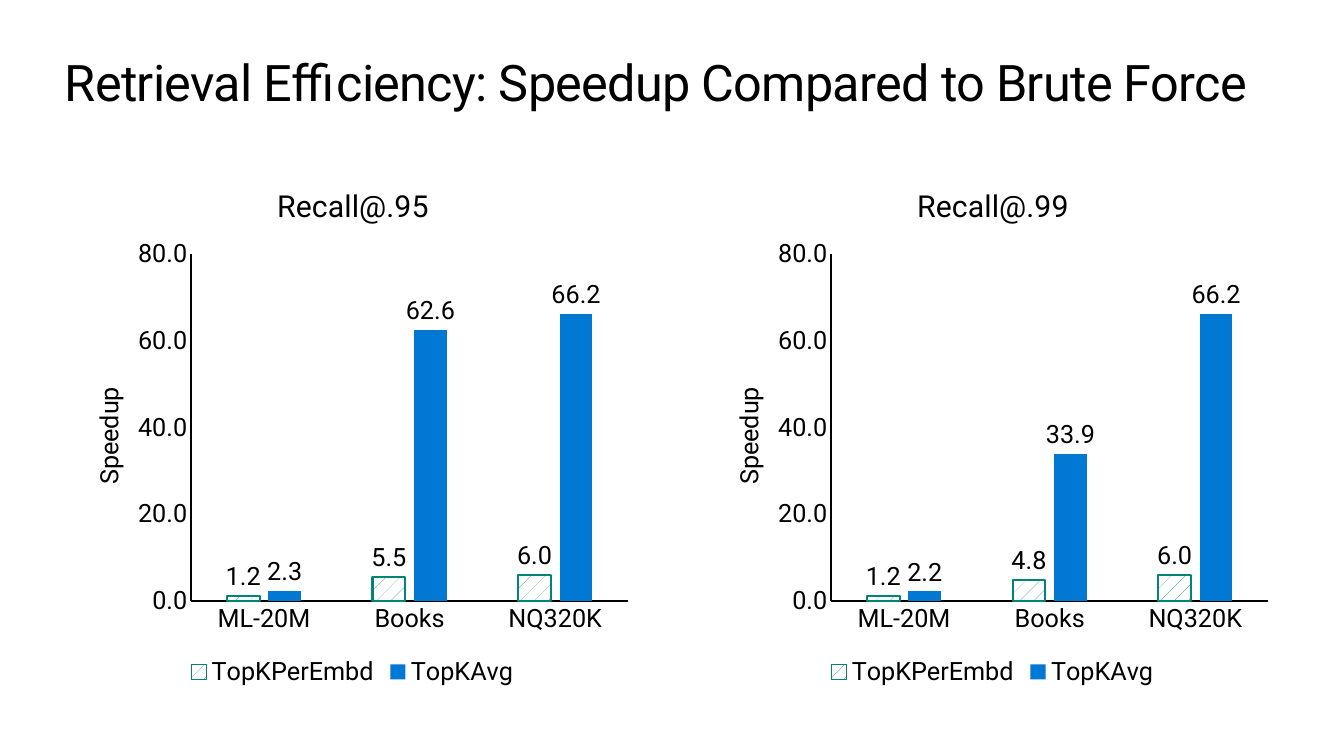
from lxml import etree
from pptx import Presentation
from pptx.chart.data import CategoryChartData
from pptx.dml.color import RGBColor
from pptx.enum.chart import XL_CHART_TYPE, XL_LABEL_POSITION, XL_LEGEND_POSITION, XL_TICK_MARK
from pptx.enum.dml import MSO_PATTERN
from pptx.enum.text import MSO_ANCHOR, PP_ALIGN
from pptx.oxml import parse_xml
from pptx.oxml.ns import nsdecls, qn
from pptx.util import Cm, Pt

COLORS = {"ink": "000000", "paper": "FFFFFF", "teal": "008575", "blue": "0078D4"}
DATASETS = ["ML-20M", "Books", "NQ320K"]
PER_EMBEDDING = "TopKPerEmbd"
AVERAGE = "TopKAvg"
RECALL_CHARTS = [
    ("Recall@.95", 1.63, {PER_EMBEDDING: (1.2, 5.5, 6.0), AVERAGE: (2.3, 62.6, 66.2)}),
    ("Recall@.99", 17.76, {PER_EMBEDDING: (1.2, 4.8, 6.0), AVERAGE: (2.2, 33.9, 66.2)}),
]


def color(name):
    return RGBColor.from_string(COLORS[name])


def layout(x, y, width=None, height=None):
    """Return a manual chart layout, in fractions of the chart's size."""
    parts = '<c:layoutTarget val="inner"/>' if width else ""
    parts += '<c:xMode val="edge"/><c:yMode val="edge"/>'
    sizes = {"x": x, "y": y, "w": width, "h": height}
    parts += "".join(f'<c:{key} val="{size}"/>' for key, size in sizes.items() if size)
    return parse_xml(f'<c:layout {nsdecls("c")}><c:manualLayout>{parts}</c:manualLayout></c:layout>')


class SpeedupSlide:
    font_name = "Roboto"
    number_format = "0.0"
    line_width = Pt(1.5)

    def __init__(self, deck):
        self.page = deck.slides.add_slide(deck.slide_layouts[5])

    def style_font(self, font, size):
        font.name = self.font_name
        font.size = Pt(size)
        font.bold = False
        font.color.rgb = color("ink")

    def add_title(self, text):
        box = self.page.shapes.title
        box.left, box.top, box.width, box.height = Cm(1.63), Cm(1.27), Cm(30.61), Cm(1.55)
        frame = box.text_frame
        frame.margin_left = frame.margin_top = frame.margin_right = frame.margin_bottom = 0
        frame.vertical_anchor = MSO_ANCHOR.MIDDLE
        frame.word_wrap = True
        para = frame.paragraphs[0]
        para.alignment = PP_ALIGN.LEFT
        span = para.add_run()
        span.text = text
        self.style_font(span.font, 36)
        span.font._element.set("spc", "-50")

    def write_chart_title(self, title, text, size, x, y):
        """Fill a chart or axis title and pin its top left corner."""
        span = title.text_frame.paragraphs[0].add_run()
        span.text = text
        self.style_font(span.font, size)
        element = title._element
        for old_layout in element.findall(qn("c:layout")):
            element.remove(old_layout)
        element.find(qn("c:tx")).addnext(layout(x, y))

    def style_axis(self, axis):
        axis.has_major_gridlines = False
        axis.major_tick_mark = axis.minor_tick_mark = XL_TICK_MARK.NONE
        self.style_font(axis.tick_labels.font, 18)
        axis.format.line.color.rgb = color("ink")
        axis.format.line.width = self.line_width

    def style_series(self, series):
        fill = series.format.fill
        if series.name == PER_EMBEDDING:
            fill.patterned()
            fill.pattern = MSO_PATTERN.PERCENT_5
            fill.fore_color.rgb = color("teal")
            fill.back_color.rgb = color("paper")
            series.format.line.color.rgb = color("teal")
            series.format.line.width = self.line_width
        else:
            fill.solid()
            fill.fore_color.rgb = color("blue")
        labels = series.data_labels
        labels.show_value = True
        labels.position = XL_LABEL_POSITION.OUTSIDE_END
        labels.number_format = self.number_format
        labels.number_format_is_linked = False
        self.style_font(labels.font, 18)

    def add_speedup_chart(self, title, left, speedups):
        data = CategoryChartData(number_format=self.number_format)
        data.categories = DATASETS
        for name, values in speedups.items():
            data.add_series(name, values)
        chart = self.page.shapes.add_chart(
            XL_CHART_TYPE.COLUMN_CLUSTERED, Cm(left), Cm(3.99), Cm(14.49), Cm(13.44), data
        ).chart
        self.style_font(chart.font, 18)
        chart.has_title = True
        self.write_chart_title(chart.chart_title, title, 21.6, 0.36, 0.04)

        self.style_axis(chart.category_axis)
        speedup_axis = chart.value_axis
        self.style_axis(speedup_axis)
        speedup_axis.minimum_scale, speedup_axis.maximum_scale = 0, 80
        speedup_axis.major_unit = 20
        speedup_axis.tick_labels.number_format = self.number_format
        speedup_axis.tick_labels.number_format_is_linked = False
        speedup_axis.has_title = True
        self.write_chart_title(speedup_axis.axis_title, "Speedup", 18, 0.04, 0.42)
        body = speedup_axis.axis_title.text_frame._txBody.find(qn("a:bodyPr"))
        body.set("rot", "-5400000")
        body.set("vert", "horz")

        plot = chart.plots[0]
        plot.gap_width = 219
        plot.overlap = -27
        plot.vary_by_categories = False
        for series in plot.series:
            self.style_series(series)

        chart.has_legend = True
        chart.legend.position = XL_LEGEND_POSITION.BOTTOM
        chart.legend.include_in_layout = False
        self.style_font(chart.legend.font, 18)

        plot_area = chart._chartSpace.chart.plotArea
        for old_layout in plot_area.findall(qn("c:layout")):
            plot_area.remove(old_layout)
        plot_area.insert(0, layout(0.22, 0.18, 0.76, 0.65))


def main():
    deck = Presentation()
    deck.slide_width, deck.slide_height = Cm(33.87), Cm(19.05)
    slide = SpeedupSlide(deck)
    slide.add_title("Retrieval Efficiency: Speedup Compared to Brute Force")
    for title, left, speedups in RECALL_CHARTS:
        slide.add_speedup_chart(title, left, speedups)
    deck.save("out.pptx")


if __name__ == "__main__":
    main()
